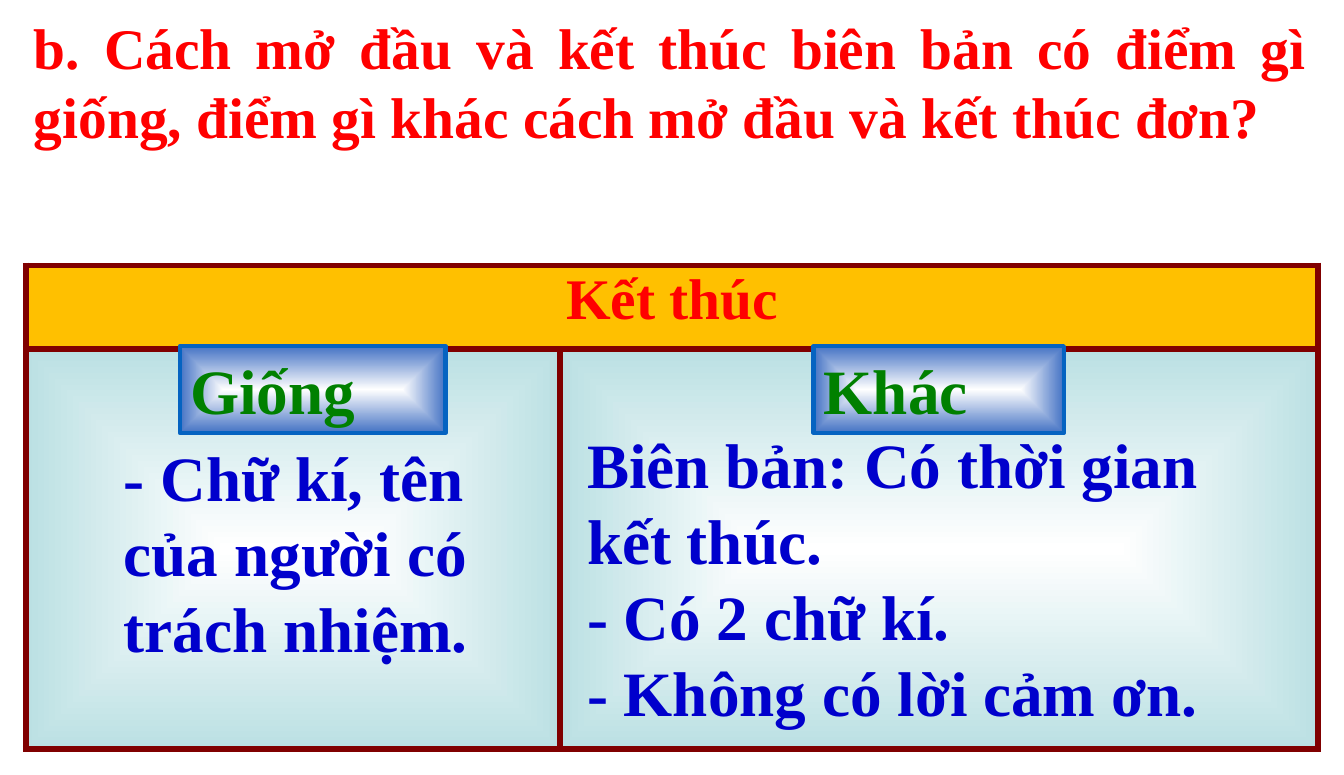
from dataclasses import dataclass

from lxml import etree
from pptx import Presentation
from pptx.dml.color import RGBColor
from pptx.enum import shapes, text
from pptx.oxml import ns
from pptx.util import Inches, Pt


@dataclass(frozen=True)
class Theme:
    font: str = "Times New Roman"
    heading_size: int = 40
    body_size: int = 44
    red: str = "FF0000"
    blue: str = "0000CC"
    green: str = "008000"
    border: str = "800000"
    header_fill: str = "FFC000"
    glow: str = "FFFFFF"
    cell_edge: str = "BBE0E3"
    label_edge: str = "4472C4"
    label_line: str = "0563C1"


@dataclass(frozen=True)
class Box:
    left: float
    top: float
    width: float
    height: float

    def lengths(self) -> tuple:
        return tuple(Inches(n) for n in (self.left, self.top, self.width, self.height))


@dataclass(frozen=True)
class TextBlock:
    box: Box
    lines: tuple[str, ...]
    size: int
    color: str
    align: text.PP_ALIGN = text.PP_ALIGN.LEFT


THEME = Theme()
LEFT, JUSTIFY = text.PP_ALIGN.LEFT, text.PP_ALIGN.JUSTIFY
LABEL_TOP, LABEL_HEIGHT = 3.35, 0.84
TABLE_BOX = Box(0.25, 2.57, 12.5, 4.68)
COLUMN_WIDTHS = (5.17, 7.33)
ROW_HEIGHTS = (0.81, 3.87)

TEXT_BLOCKS = (
    TextBlock(Box(1.1, 4.19, 3.84, 2.32), ("- Chữ kí, tên của người có trách nhiệm.",),
              THEME.body_size, THEME.blue),
    TextBlock(Box(5.58, 4.07, 7, 3.06),
              ("Biên bản: Có thời gian kết thúc.", "- Có 2 chữ kí.", "- Không có lời cảm ơn."),
              THEME.body_size, THEME.blue),
    TextBlock(Box(0.23, 0.07, 12.5, 1.45),
              ("b. Cách mở đầu và kết thúc biên bản có điểm gì giống, "
               "điểm gì khác cách mở đầu và kết thúc đơn?",),
              THEME.heading_size, THEME.red, JUSTIFY),
)
LABELS = (
    TextBlock(Box(1.74, LABEL_TOP, 2.57, LABEL_HEIGHT), ("Giống",), THEME.body_size, THEME.green),
    TextBlock(Box(7.87, LABEL_TOP, 2.42, LABEL_HEIGHT), ("Khác",), THEME.body_size, THEME.green),
)


def write_text(frame, lines: tuple[str, ...], *, size: int, color: str,
               align: text.PP_ALIGN = LEFT) -> None:
    frame.word_wrap = True
    for index, line in enumerate(lines):
        paragraph = frame.paragraphs[0] if index == 0 else frame.add_paragraph()
        paragraph.alignment = align
        run = paragraph.add_run()
        run.text = line
        run.font.name = THEME.font
        run.font.size = Pt(size)
        run.font.bold = True
        run.font.color.rgb = RGBColor.from_string(color)


def fill_from_center(fill, properties, edge: str) -> None:
    """Fill with a rectangular gradient, light in the centre."""
    fill.gradient()
    for stop, color in zip(fill.gradient_stops, (THEME.glow, edge)):
        stop.color.rgb = RGBColor.from_string(color)
    gradient = properties.find(ns.qn("a:gradFill"))
    gradient.remove(gradient.find(ns.qn("a:lin")))
    shading = etree.SubElement(gradient, ns.qn("a:path"), path="shape")
    etree.SubElement(shading, ns.qn("a:fillToRect"), l="50000", t="50000", r="50000", b="50000")


def add_borders(properties, color: str, width: float) -> None:
    for side in ("lnL", "lnR", "lnT", "lnB"):
        line = etree.SubElement(properties, ns.qn(f"a:{side}"), w=str(Pt(width)))
        solid = etree.SubElement(line, ns.qn("a:solidFill"))
        etree.SubElement(solid, ns.qn("a:srgbClr"), val=color)


def add_comparison_table(slide) -> None:
    table = slide.shapes.add_table(2, 2, *TABLE_BOX.lengths()).table
    table.first_row = table.horz_banding = False
    for column, width in zip(table.columns, COLUMN_WIDTHS):
        column.width = Inches(width)
    for row, height in zip(table.rows, ROW_HEIGHTS):
        row.height = Inches(height)
    for row_index, row in enumerate(table.rows):
        for cell in row.cells:
            properties = cell._tc.get_or_add_tcPr()
            add_borders(properties, THEME.border, 4.5)
            if row_index == 0:
                cell.fill.solid()
                cell.fill.fore_color.rgb = RGBColor.from_string(THEME.header_fill)
            else:
                fill_from_center(cell.fill, properties, THEME.cell_edge)
    header = table.cell(0, 0)
    header.merge(table.cell(0, 1))
    header.margin_left = header.margin_right = Inches(0.07)
    header.margin_top = header.margin_bottom = Inches(0.03)
    write_text(header.text_frame, ("Kết thúc",), size=THEME.heading_size,
               color=THEME.red, align=text.PP_ALIGN.CENTER)


def add_text_block(slide, block: TextBlock) -> None:
    shape = slide.shapes.add_textbox(*block.box.lengths())
    write_text(shape.text_frame, block.lines, size=block.size, color=block.color,
               align=block.align)


def add_label(slide, label: TextBlock) -> None:
    shape = slide.shapes.add_shape(shapes.MSO_SHAPE.RECTANGLE, *label.box.lengths())
    shape.shadow.inherit = False
    fill_from_center(shape.fill, shape._element.spPr, THEME.label_edge)
    shape.line.color.rgb = RGBColor.from_string(THEME.label_line)
    shape.line.width = Pt(3)
    shape.text_frame.vertical_anchor = text.MSO_ANCHOR.TOP
    write_text(shape.text_frame, label.lines, size=label.size, color=label.color,
               align=label.align)


def main() -> None:
    presentation = Presentation()
    presentation.slide_width, presentation.slide_height = Inches(13), Inches(7.5)
    slide = presentation.slides.add_slide(presentation.slide_layouts[6])
    add_comparison_table(slide)
    for label in LABELS:
        add_label(slide, label)
    for block in TEXT_BLOCKS:
        add_text_block(slide, block)
    presentation.save("out.pptx")


if __name__ == "__main__":
    main()
